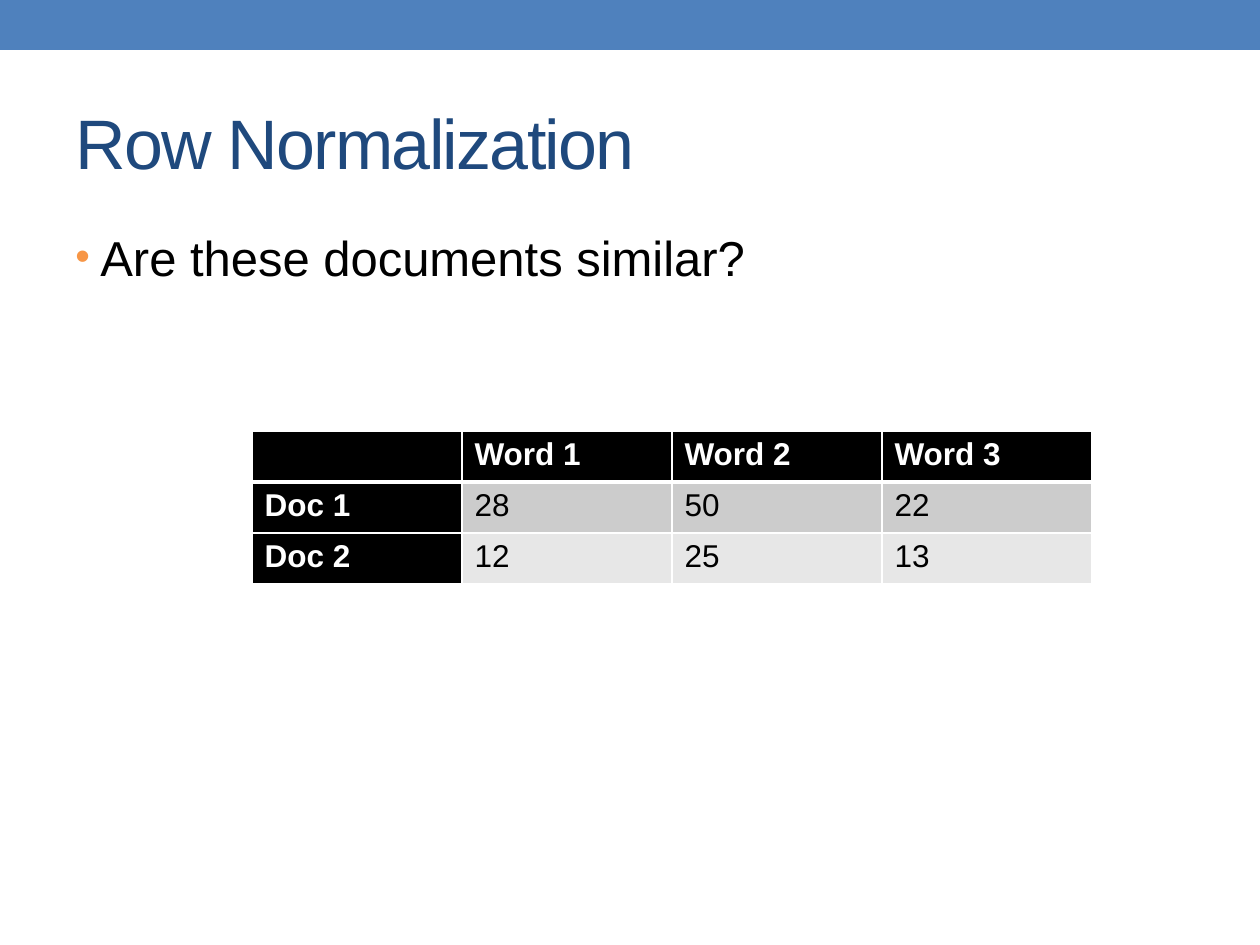
from lxml.etree import SubElement
from pptx import Presentation
from pptx.dml.color import RGBColor
from pptx.enum.shapes import MSO_SHAPE
from pptx.enum.text import MSO_ANCHOR, PP_ALIGN
from pptx.oxml.ns import qn
from pptx.util import Emu, Pt

PIXELS_PER_INCH = 126
FONT = "Arial"
WHITE, BLACK = "FFFFFF", "000000"
BAND_BLUE, TITLE_BLUE, BULLET_ORANGE = "4F81BD", "1F497D", "F79646"
ROW_FILLS = ["CCCCCC", "E7E7E7"]
WORD_COUNTS = [
    ["", "Word 1", "Word 2", "Word 3"],
    ["Doc 1", "28", "50", "22"],
    ["Doc 2", "12", "25", "13"],
]


def px(length):
    return Emu(round(length * 914400 / PIXELS_PER_INCH))


def color(hex_string):
    return RGBColor.from_string(hex_string)


def add_run(paragraph, text, size, hex_color, bold=False):
    run = paragraph.add_run()
    run.text = text
    run.font.name = FONT
    run.font.size = Pt(size)
    run.font.bold = bold
    run.font.color.rgb = color(hex_color)
    return run


def add_band(slide, left, top, width, height):
    band = slide.shapes.add_shape(
        MSO_SHAPE.RECTANGLE, px(left), px(top), px(width), px(height))
    band.shadow.inherit = False
    band.fill.solid()
    band.fill.fore_color.rgb = color(BAND_BLUE)
    band.line.fill.background()


def place_title(slide, left, top, width, height):
    title = slide.shapes.title
    title.left, title.top = px(left), px(top)
    title.width, title.height = px(width), px(height)
    title.text_frame.vertical_anchor = MSO_ANCHOR.MIDDLE
    paragraph = title.text_frame.paragraphs[0]
    paragraph.alignment = PP_ALIGN.LEFT
    run = add_run(paragraph, "Row Normalization", 40, TITLE_BLUE)
    run.font._element.set("spc", "-100")


def add_question(slide, left, top, width, height):
    text_box = slide.shapes.add_textbox(px(left), px(top), px(width), px(height))
    text_box.text_frame.word_wrap = True
    paragraph = text_box.text_frame.paragraphs[0]
    paragraph.space_before = Pt(5.6)
    add_run(paragraph, "Are these documents similar?", 28, BLACK)
    properties = paragraph._p.get_or_add_pPr()
    properties.set("marL", str(px(25)))
    properties.set("indent", str(-px(25)))
    bullet_color = SubElement(properties, qn("a:buClr"))
    SubElement(bullet_color, qn("a:srgbClr"), val=BULLET_ORANGE)
    SubElement(properties, qn("a:buSzPct"), val="85000")
    SubElement(properties, qn("a:buFont"), typeface=FONT)
    SubElement(properties, qn("a:buChar"), char="•")


def set_borders(cell, top=1, bottom=1):
    properties = cell._tc.get_or_add_tcPr()
    for side, points in (("L", 1), ("R", 1), ("T", top), ("B", bottom)):
        line = SubElement(properties, qn(f"a:ln{side}"), w=str(Pt(points)))
        fill = SubElement(line, qn("a:solidFill"))
        SubElement(fill, qn("a:srgbClr"), val=WHITE)


def add_word_table(slide, left, top, width, height):
    row_count, column_count = len(WORD_COUNTS), len(WORD_COUNTS[0])
    table = slide.shapes.add_table(
        row_count, column_count, px(left), px(top), px(width), px(height)).table
    table.first_col = True
    for column in table.columns:
        column.width = px(width / column_count)
    for row_index, values in enumerate(WORD_COUNTS):
        table.rows[row_index].height = px(height / row_count)
        for column_index, value in enumerate(values):
            cell = table.cell(row_index, column_index)
            is_heading = row_index == 0 or column_index == 0
            set_borders(cell, top=3 if row_index == 1 else 1,
                        bottom=3 if row_index == 0 else 1)
            cell.fill.solid()
            cell.fill.fore_color.rgb = color(
                BLACK if is_heading else ROW_FILLS[row_index - 1])
            if value:
                add_run(cell.text_frame.paragraphs[0], value, 18,
                        WHITE if is_heading else BLACK, is_heading)


def main():
    presentation = Presentation()
    presentation.slide_width, presentation.slide_height = px(1260), px(945)
    slide = presentation.slides.add_slide(presentation.slide_layouts[5])
    add_band(slide, 0, 0, 1260, 50)
    place_title(slide, 63, 73, 1134, 136)
    add_question(slide, 63, 221, 1134, 672)
    add_word_table(slide, 252, 431, 840, 153)
    presentation.save("out.pptx")


if __name__ == "__main__":
    main()
